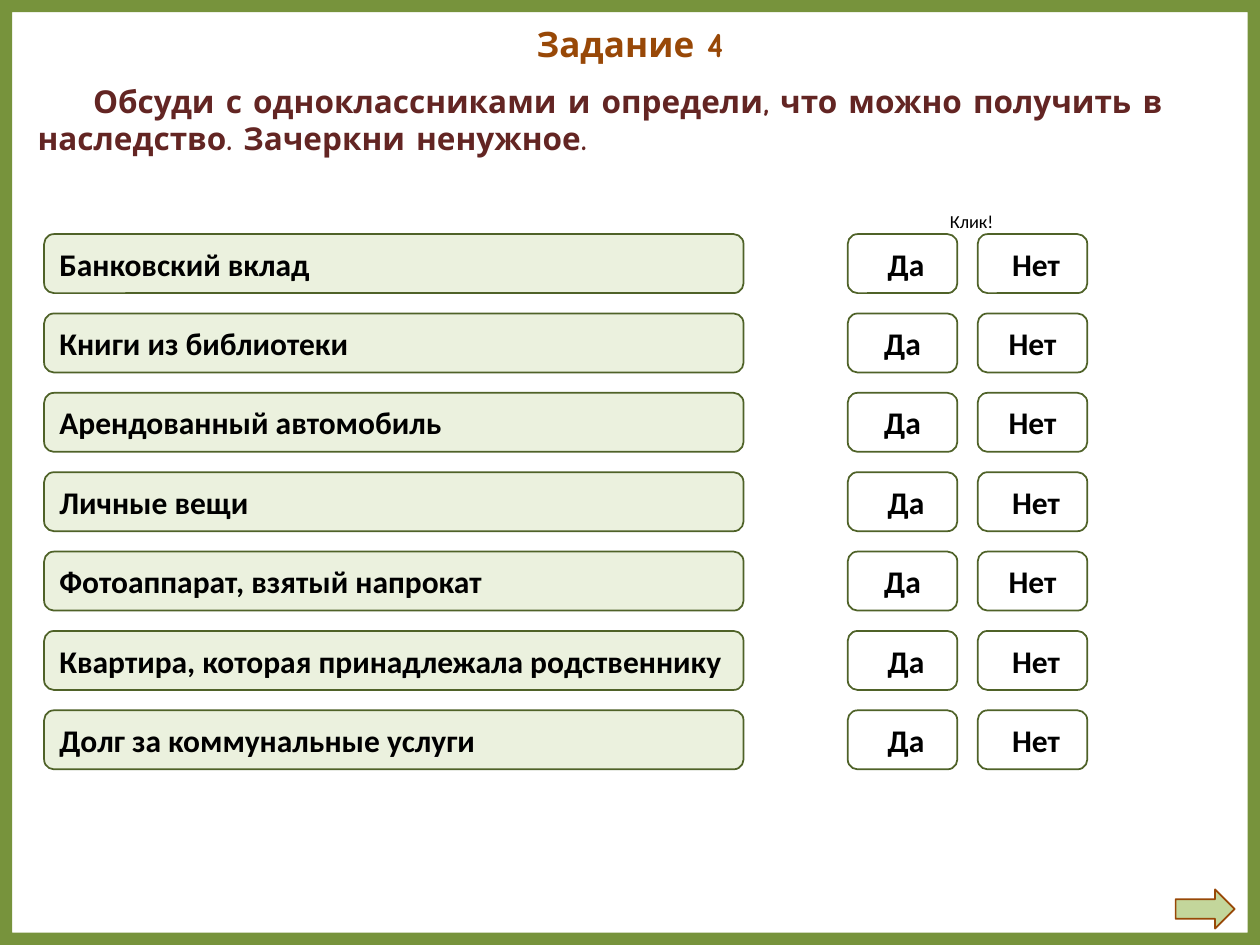
"""Build a quiz slide about what can be inherited, with yes and no buttons."""
import pptx
import pptx.dml.color
import pptx.enum.shapes
import pptx.enum.text
import pptx.util

Cm = pptx.util.Cm
SHAPE = pptx.enum.shapes.MSO_SHAPE
ALIGN = pptx.enum.text.PP_ALIGN
ANCHOR = pptx.enum.text.MSO_ANCHOR

COLOURS = {
    "frame": "77933C", "border": "4F6228", "item": "EBF1DE", "button": "FFFFFF",
    "arrow": "C3D69B", "title": "984807", "task": "632523", "text": "000000",
}
TITLE = "Задание 4"
TASK = "Обсуди с одноклассниками и определи, что можно получить в наследство. Зачеркни ненужное."
HINT = "Клик!"
ITEMS = [
    ("Банковский вклад", True),
    ("Книги из библиотеки", False),
    ("Арендованный автомобиль", False),
    ("Личные вещи", True),
    ("Фотоаппарат, взятый напрокат", False),
    ("Квартира, которая принадлежала родственнику", True),
    ("Долг за коммунальные услуги", True),
]
BUTTONS = [("Да", 17.09), ("Нет", 19.71)]
ITEM_LEFT, ITEM_WIDTH, BUTTON_WIDTH = 0.89, 14.1, 2.21
ROW_TOP, ROW_STEP, ROW_HEIGHT = 4.72, 1.6, 1.19
BUTTON_SHIFT = 0.14
TASK_INDENT = 1.12


def rgb(name):
    return pptx.dml.color.RGBColor.from_string(COLOURS[name])


def add_text(box, text, size, colour="text", font="Calibri", bold=True, align=ALIGN.LEFT):
    para = box.text_frame.paragraphs[0]
    para.alignment = align
    span = para.add_run()
    span.text = text
    span.font.name = font
    span.font.size = pptx.util.Pt(size)
    span.font.bold = bold
    span.font.color.rgb = rgb(colour)
    return para


def add_label(page, place, text, size, wrap=False, **style):
    box = page.shapes.add_textbox(*map(Cm, place))
    box.text_frame.word_wrap = wrap
    return add_text(box, text, size, **style)


def add_panel(page, kind, place, fill, border=None):
    shape = page.shapes.add_shape(kind, *map(Cm, place))
    shape.shadow.inherit = False
    shape.fill.solid()
    shape.fill.fore_color.rgb = rgb(fill)
    if border:
        shape.line.color.rgb = rgb(border)
        shape.line.width = pptx.util.Pt(1)
    else:
        shape.line.fill.background()
    return shape


def add_card(page, left, top, width, text, fill, align):
    card = add_panel(page, SHAPE.ROUNDED_RECTANGLE, (left, top, width, ROW_HEIGHT), fill, "border")
    card.text_frame.word_wrap = True
    card.text_frame.vertical_anchor = ANCHOR.MIDDLE
    add_text(card, text, 18, align=align)
    return card


def main():
    deck = pptx.Presentation()
    deck.slide_width, deck.slide_height = Cm(25.4), Cm(19.05)
    page = deck.slides.add_slide(deck.slide_layouts[6])

    frame = add_panel(page, SHAPE.FRAME, (0, 0, 25.4, 19.05), "frame")
    frame.adjustments[0] = 0.013
    add_label(page, (10.5, 0.33, 4.4, 1.12), TITLE, 20,
              colour="title", font="Comic Neue", align=ALIGN.CENTER)
    task = add_label(page, (0.51, 1.52, 24.41, 1.8), TASK, 18, wrap=True,
                     colour="task", font="Comic Neue")
    task._p.get_or_add_pPr().set("indent", str(Cm(TASK_INDENT)))
    add_label(page, (18.9, 4.11, 2.59, 0.74), HINT, 10.5, bold=False)

    for row, (item, shifted) in enumerate(ITEMS):
        top = ROW_TOP + row * ROW_STEP
        add_card(page, ITEM_LEFT, top, ITEM_WIDTH, item, "item", ALIGN.LEFT)
        for answer, left in BUTTONS:
            button = add_card(page, left, top, BUTTON_WIDTH, answer, "button", ALIGN.CENTER)
            if shifted:
                button.text_frame.margin_left += Cm(BUTTON_SHIFT)

    add_panel(page, SHAPE.RIGHT_ARROW, (23.7, 17.93, 1.19, 0.79), "arrow", "title")
    deck.save("out.pptx")


if __name__ == "__main__":
    main()
